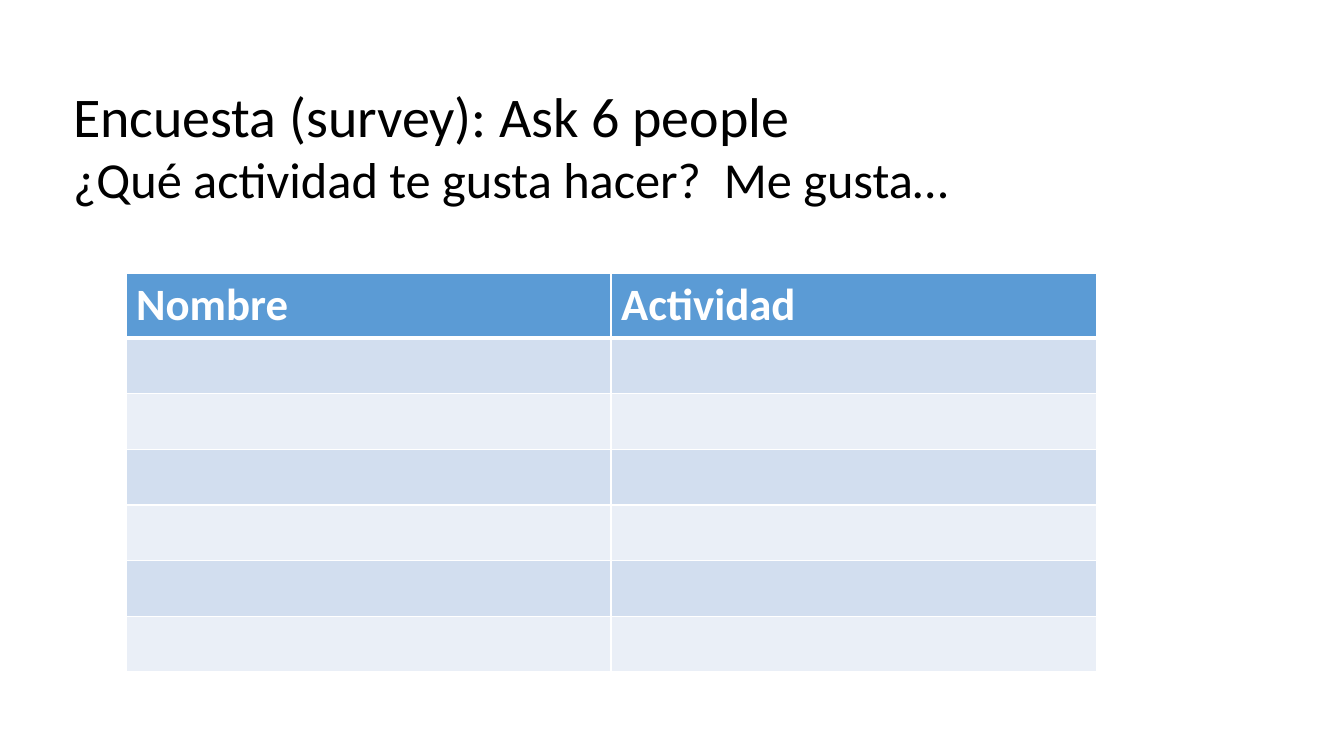
from lxml.etree import SubElement
from pptx import Presentation
from pptx.dml.color import RGBColor
from pptx.enum.text import MSO_ANCHOR, MSO_AUTO_SIZE, PP_ALIGN
from pptx.oxml.ns import qn
from pptx.util import Pt

TITLE_LINES = [
    ("Encuesta (survey): Ask 6 people", 40),
    ("¿Qué actividad te gusta hacer?  Me gusta…", 36),
]
HEADERS = ["Nombre", "Actividad"]
PEOPLE = 6

FONT = "Calibri"
COLORS = {"text": "000000", "white": "FFFFFF", "header": "5B9BD5",
          "odd": "D2DEEF", "even": "EAEFF7"}

PX = 9525  # EMU per px, 96 px to the inch
SLIDE = (1280, 720)
TITLE_BOX = (60, 72, 1115, 132)
TABLE_LEFT, TABLE_TOP = 120, 260
COL_W, HEADER_H, ROW_H = 462, 62, 53


def rgb(name):
    return RGBColor.from_string(COLORS[name])


def add_run(p, text, size, color, bold=False):
    r = p.add_run()
    r.text = text
    r.font.name = FONT
    r.font.size = Pt(size)
    r.font.bold = bold
    r.font.color.rgb = rgb(color)


def set_borders(cell, bottom, top=1):
    """Draw white lines on the four sides, with widths in points."""
    tc_pr = cell._tc.get_or_add_tcPr()
    for side, width in (("L", 1), ("R", 1), ("T", top), ("B", bottom)):
        ln = SubElement(tc_pr, qn(f"a:ln{side}"), w=str(Pt(width)))
        fill = SubElement(ln, qn("a:solidFill"))
        SubElement(fill, qn("a:srgbClr"), val=COLORS["white"])


def add_title(slide):
    sp = slide.shapes.title
    sp.left, sp.top, sp.width, sp.height = (v * PX for v in TITLE_BOX)
    tf = sp.text_frame
    tf.word_wrap = True
    tf.auto_size = MSO_AUTO_SIZE.SHAPE_TO_FIT_TEXT
    tf.vertical_anchor = MSO_ANCHOR.MIDDLE
    for i, (text, size) in enumerate(TITLE_LINES):
        p = tf.add_paragraph() if i else tf.paragraphs[0]
        p.alignment = PP_ALIGN.LEFT
        add_run(p, text, size, "text")


def add_survey_table(slide):
    heights = [HEADER_H] + [ROW_H] * PEOPLE
    table = slide.shapes.add_table(
        len(heights), len(HEADERS), TABLE_LEFT * PX, TABLE_TOP * PX,
        COL_W * len(HEADERS) * PX, sum(heights) * PX).table
    for col in table.columns:
        col.width = COL_W * PX
    for i, height in enumerate(heights):
        table.rows[i].height = height * PX
        fill = "header" if i == 0 else "odd" if i % 2 else "even"
        for j, header in enumerate(HEADERS):
            cell = table.cell(i, j)
            set_borders(cell, bottom=3 if i == 0 else 1, top=3 if i == 1 else 1)
            cell.fill.solid()
            cell.fill.fore_color.rgb = rgb(fill)
            if i == 0:
                add_run(cell.text_frame.paragraphs[0], header, 32, "white", bold=True)


def main():
    prs = Presentation()
    prs.slide_width, prs.slide_height = (v * PX for v in SLIDE)
    slide = prs.slides.add_slide(prs.slide_layouts[5])
    add_title(slide)
    add_survey_table(slide)
    prs.save("out.pptx")


if __name__ == "__main__":
    main()
